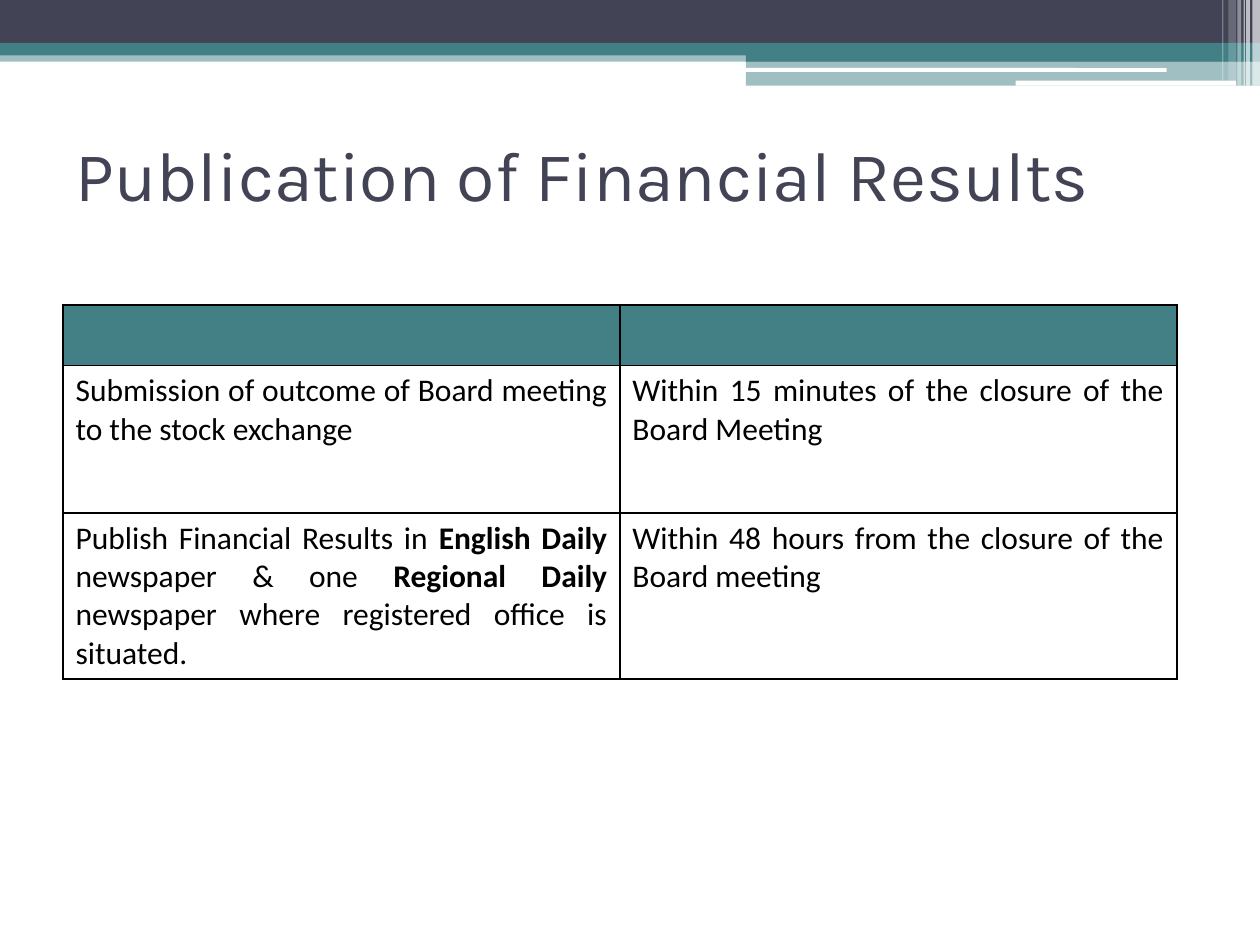
from lxml.etree import SubElement
from pptx import Presentation
from pptx.dml.color import RGBColor
from pptx.enum.shapes import MSO_SHAPE
from pptx.enum.text import MSO_ANCHOR, PP_ALIGN
from pptx.oxml import parse_xml
from pptx.oxml.ns import nsdecls, qn
from pptx.util import Inches, Pt

COLS, ROWS = 100, 75  # grid of the 10 x 7.5 inch slide
NAVY, TEAL, WHITE, BLACK = "424456", "438086", "FFFFFF", "000000"


def color(hexa):
    return RGBColor.from_string(hexa)


class Deck:
    """Holds the style and the current slide; lengths are grid columns and rows."""
    title_font = {"name": "Karla", "size": Pt(40)}
    body_font = {"name": "Calibri", "size": Pt(18)}

    def __init__(self):
        self.prs = Presentation()
        self.prs.slide_width, self.prs.slide_height = Inches(10), Inches(7.5)
        self.slide = self.prs.slides.add_slide(self.prs.slide_layouts[6])
        self.shapes = self.slide.shapes

    def x(self, cols):
        return round(self.prs.slide_width * cols / COLS)

    def y(self, rows):
        return round(self.prs.slide_height * rows / ROWS)

    def box(self, left, top, width, height):
        return self.x(left), self.y(top), self.x(width), self.y(height)

    def bar(self, place, fill, alpha=100, kind=MSO_SHAPE.RECTANGLE):
        bar = self.shapes.add_shape(kind, *self.box(*place))
        bar.shadow.inherit = False
        bar.line.fill.background()
        bar.fill.solid()
        bar.fill.fore_color.rgb = color(fill)
        if alpha < 100:
            tint = bar._element.spPr.find(".//" + qn("a:srgbClr"))
            SubElement(tint, qn("a:alpha"), val=str(alpha * 1000))

    def text(self, para, words, style, hexa, bold=False):
        run = para.add_run()
        run.text = words
        for key, value in {**style, "bold": bold}.items():
            setattr(run.font, key, value)
        run.font.color.rgb = color(hexa)

    def title(self, place, words):
        frame = self.shapes.add_textbox(*self.box(*place)).text_frame
        frame.word_wrap = True
        frame.vertical_anchor = MSO_ANCHOR.MIDDLE
        self.text(frame.paragraphs[0], words, self.title_font, NAVY)

    def cell(self, cell, runs, head):
        cell.fill.solid()
        cell.fill.fore_color.rgb = color(TEAL if head else WHITE)
        para = cell.text_frame.paragraphs[0]
        para.alignment = PP_ALIGN.JUSTIFY
        for words, bold in runs:
            self.text(para, words, self.body_font, BLACK, bold)
        # Borders come before the fill in the cell properties
        for spot, side in enumerate(("lnL", "lnR", "lnT", "lnB")):
            cell._tc.get_or_add_tcPr().insert(spot, parse_xml(
                f'<a:{side} {nsdecls("a")} w="{Pt(1)}"><a:solidFill>'
                f'<a:srgbClr val="{BLACK}"/></a:solidFill></a:{side}>'))

    def table(self, place, heights, data):
        grid = self.shapes.add_table(
            len(data), len(data[0]), *self.box(*place)).table
        for row, (high, line) in enumerate(zip(heights, data)):
            grid.rows[row].height = self.y(high)
            for col, runs in enumerate(line):
                self.cell(grid.cell(row, col), runs, row == 0)


def main():
    deck = Deck()

    # Header bands
    for place, fill, alpha in (
        ((0, 4, 100, 0.9), TEAL, 50),
        ((0, 0, 100, 3.4), NAVY, 100),
        ((0, 3.4, 100, 1), TEAL, 100),
        ((59.2, 3.9, 40.8, 1), TEAL, 100),
        ((59.2, 4.8, 40.8, 2), TEAL, 50),
    ):
        deck.bar(place, fill, alpha)

    # White rules across the bands
    for place in ((59.1, 5.4, 33.5, 0.3), (80.6, 6.4, 17.5, 0.4)):
        deck.bar(place, WHITE, kind=MSO_SHAPE.ROUNDED_RECTANGLE)

    # Translucent stripes at the right edge
    for left, width, height, alpha in (
        (99.4, 0.6, 6.8, 65),
        (98.9, 0.3, 6.8, 65),
        (98.7, 0.1, 6.8, 60),
        (98.2, 0.3, 6.8, 40),
        (97.5, 0.6, 6.4, 20),
        (97, 0.1, 6.4, 30),
    ):
        deck.bar((left, 0, width, height), WHITE, alpha)

    # Deadlines table: each cell is a list of (words, bold) runs
    deck.table((5, 24.2, 88.4, 29.7), (4.8, 11.7, 13.2), (
        ([], []),
        ([("Submission of outcome of Board meeting to the stock exchange", False)],
         [("Within 15 minutes of the closure of the Board Meeting", False)]),
        ([("Publish Financial Results in ", False),
          ("English Daily ", True),
          ("newspaper & one ", False),
          ("Regional Daily ", True),
          ("newspaper where registered office is situated.", False)],
         [("Within 48 hours from the closure of the Board meeting", False)]),
    ))

    # Title
    deck.title((5, 9.2, 83.3, 9.2), "Publication of Financial Results")

    deck.prs.save("out.pptx")


if __name__ == "__main__":
    main()
